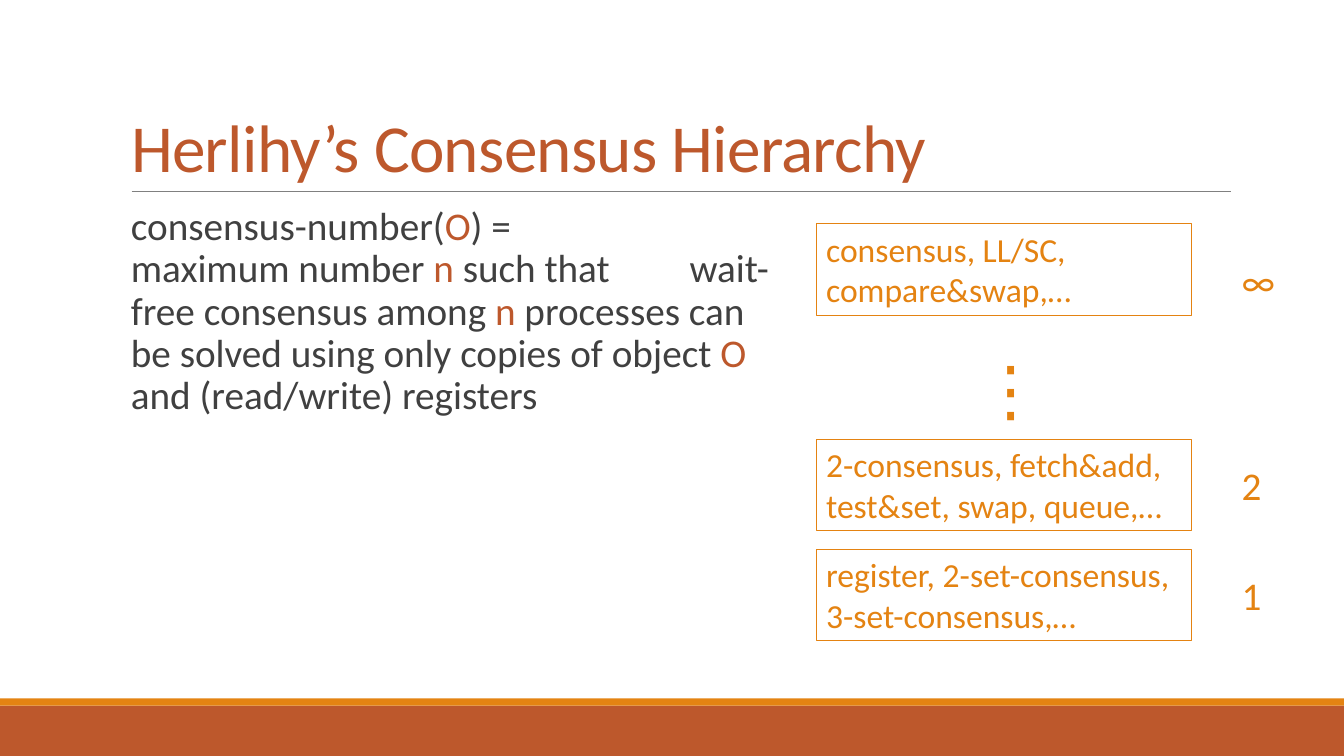
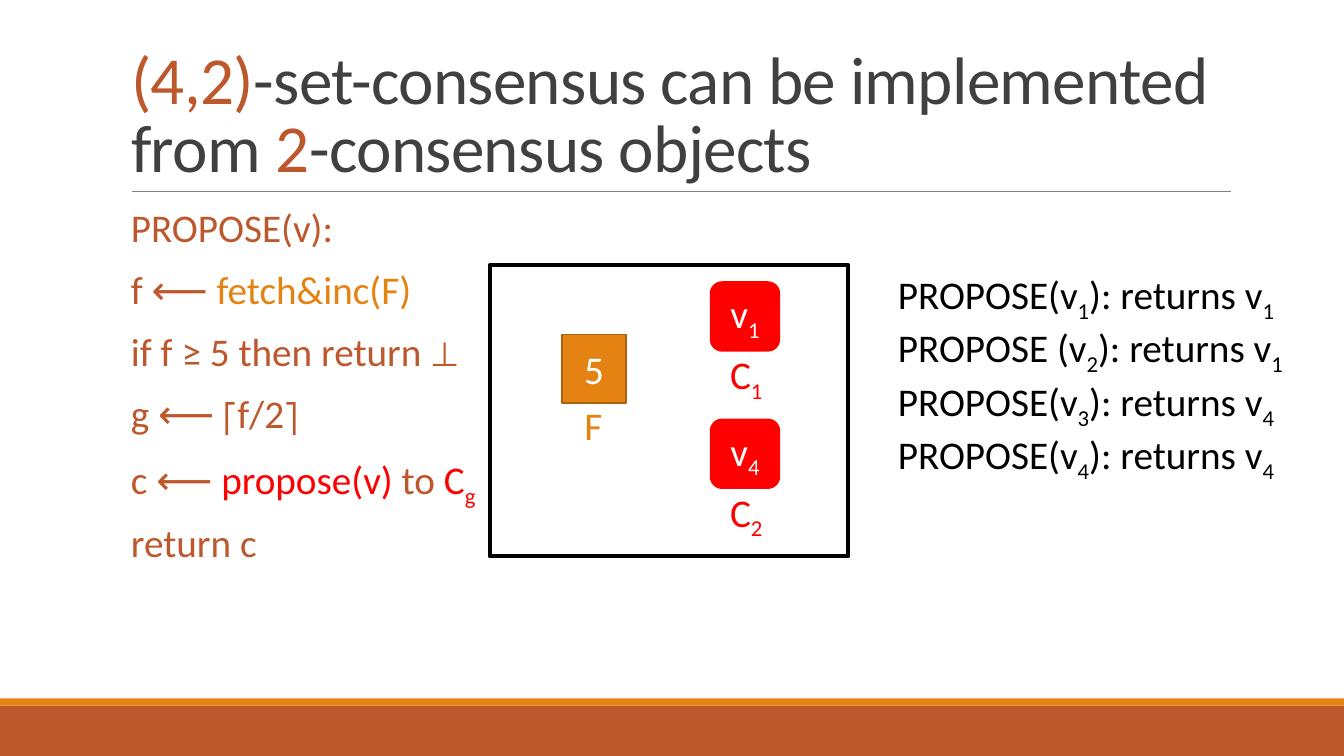
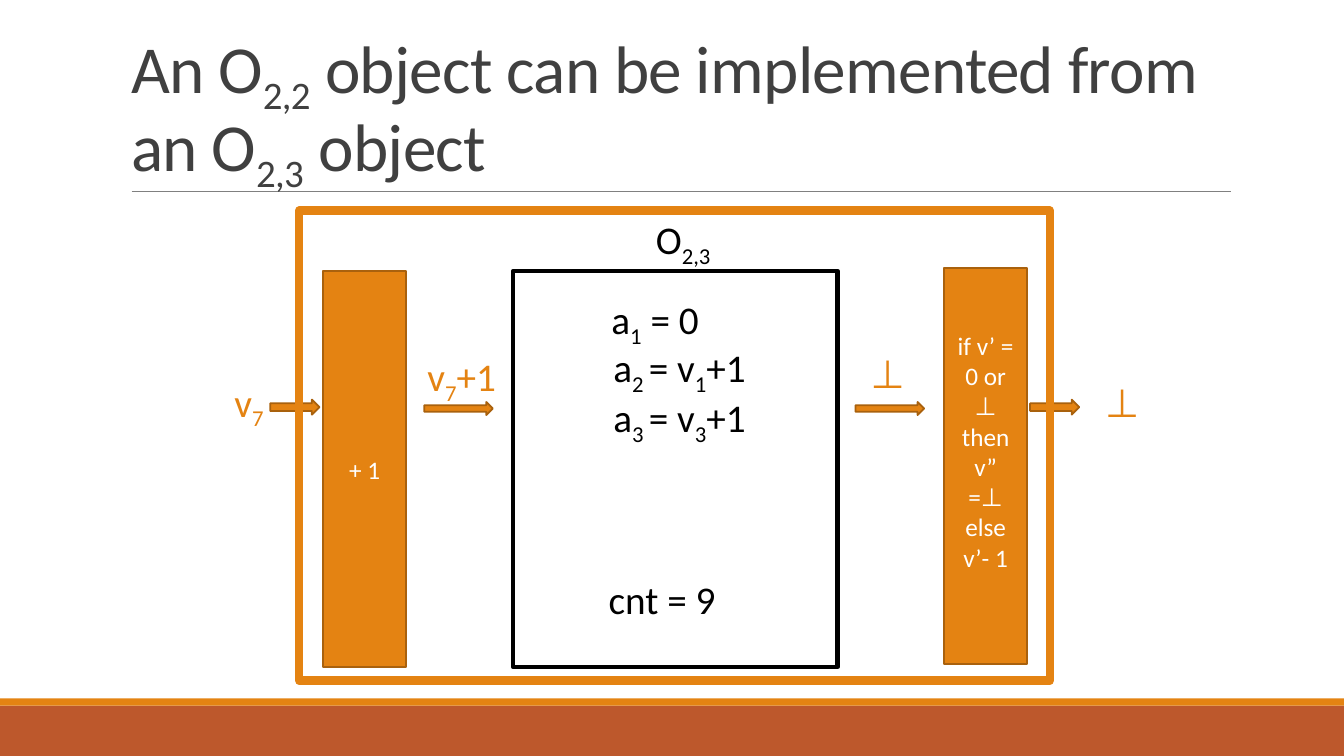
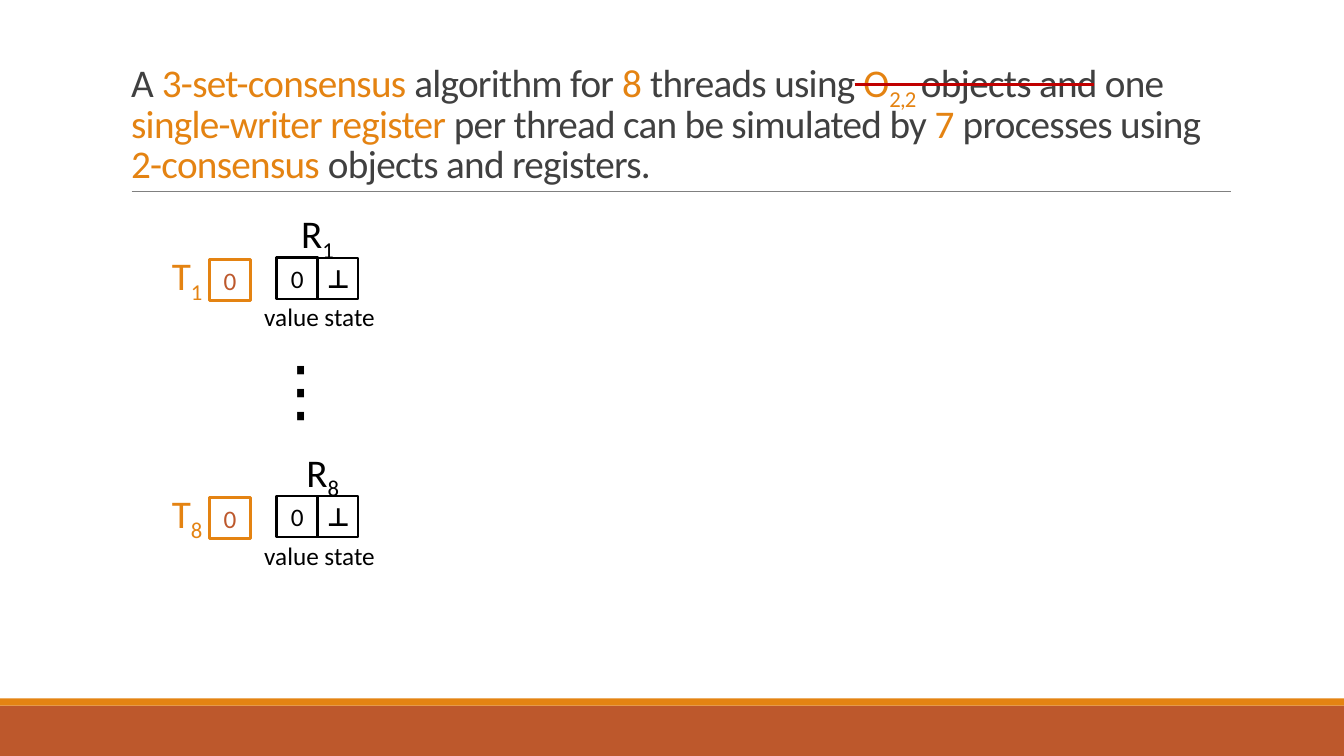
from lxml.etree import SubElement
from pptx import Presentation
from pptx.dml.color import RGBColor
from pptx.enum.shapes import MSO_CONNECTOR, MSO_SHAPE as SHAPE
from pptx.enum.text import MSO_ANCHOR as ANCHOR, MSO_AUTO_SIZE as AUTO_SIZE, PP_ALIGN as ALIGN
from pptx.oxml.ns import qn
from pptx.util import Cm, Pt

RUST = RGBColor(0xBD, 0x58, 0x2C)
ORANGE = RGBColor(0xE4, 0x83, 0x12)
BROWN = RGBColor(0xA9, 0x61, 0x0D)
DARK = RGBColor(0x40, 0x40, 0x40)
GRAY = RGBColor(0x80, 0x80, 0x80)
RED = RGBColor(0xFF, 0x00, 0x00)
CRIMSON = RGBColor(0xC0, 0x00, 0x00)
BLACK = RGBColor(0x00, 0x00, 0x00)
WHITE = RGBColor(0xFF, 0xFF, 0xFF)
FONT = "Calibri"


def write_runs(paragraph, pieces, size, spacing=0):
    for text, color, *own_size in pieces:
        if text == "\n":
            paragraph.add_line_break()
            continue
        for index, part in enumerate(text.split("|")):
            if not part:
                continue
            run = paragraph.add_run()
            run.text = part
            run.font.name = FONT
            run.font.size = Pt(own_size[0] if own_size else size)
            run.font.color.rgb = color
            properties = run._r.get_or_add_rPr()
            if spacing:
                properties.set("spc", str(spacing))
            if index % 2:
                properties.set("baseline", "-25000")


def add_item(slide, kind, left, top, width, height, lines=(), size=28, color=BLACK,
             fill=None, line=None, weight=1.25, align=ALIGN.LEFT, anchor=ANCHOR.TOP):
    frame = Cm(left), Cm(top), Cm(width), Cm(height)
    if kind is None:
        shape = slide.shapes.add_textbox(*frame)
    else:
        shape = slide.shapes.add_shape(kind, *frame)
        shape.shadow.inherit = False
        if fill is None:
            shape.fill.background()
        else:
            shape.fill.solid()
            shape.fill.fore_color.rgb = fill
        if line is None:
            shape.line.fill.background()
        else:
            shape.line.color.rgb = line
            shape.line.width = Pt(weight)
    text_frame = shape.text_frame
    text_frame.word_wrap = True
    text_frame.vertical_anchor = anchor
    for index, content in enumerate(lines):
        paragraph = text_frame.add_paragraph() if index else text_frame.paragraphs[0]
        paragraph.alignment = align
        pieces = [(content, color)] if isinstance(content, str) else content
        write_runs(paragraph, pieces, size)
    return shape


presentation = Presentation()
presentation.slide_width = Cm(33.87)
presentation.slide_height = Cm(19.05)
layout = presentation.slide_layouts[5]

for placeholder in list(layout.placeholders):
    if placeholder.placeholder_format.idx:
        placeholder._element.getparent().remove(placeholder._element)
    else:
        placeholder.left, placeholder.top = Cm(3.05), Cm(0.79)
        placeholder.width, placeholder.height = Cm(28.4), Cm(4.04)
        placeholder.text_frame.vertical_anchor = ANCHOR.BOTTOM
        placeholder.text_frame.auto_size = AUTO_SIZE.NONE

titles = (
    (48, [("Herlihy’s Consensus Hierarchy", RUST)]),
    (48, [("(4,2)", RUST), ("-set-consensus can be implemented from ", DARK),
          ("2", RUST), ("-consensus objects", DARK)]),
    (48, [("An O|2,2| object can be implemented from an O|2,3| object", DARK)]),
    (28, [("A ", DARK), ("3-set-consensus", ORANGE), (" algorithm for ", DARK),
          ("8 ", ORANGE), ("threads using ", DARK), ("O|2,2 |", ORANGE),
          ("objects and one ", DARK), ("single-writer register ", ORANGE),
          ("per thread can be simulated by ", DARK), ("7", ORANGE),
          (" processes using", DARK), ("\n", DARK), ("2-consensus", ORANGE),
          (" objects and registers.", DARK)]),
)
slides = []
for size, pieces in titles:
    slide = presentation.slides.add_slide(layout)
    paragraph = slide.shapes.title.text_frame.paragraphs[0]
    paragraph.alignment = ALIGN.LEFT
    paragraph.line_spacing = 0.85
    write_runs(paragraph, pieces, size, spacing=-50)
    slides.append(slide)
hierarchy, set_consensus, object_slide, simulation = slides

connectors = []
for slide, start, end, height, color, weight in (
    (hierarchy, 3.32, 31.01, 4.83, GRAY, 0.5),
    (simulation, 21.54, 27.56, 2.13, CRIMSON, 2.25),
):
    connector = slide.shapes.add_connector(
        MSO_CONNECTOR.STRAIGHT, Cm(start), Cm(height), Cm(end), Cm(height))
    connector.line.color.rgb = color
    connector.line.width = Pt(weight)
    SubElement(connector._element.spPr, qn("a:effectLst"))
    connectors.append(connector)
title_rule = connectors[0]
wide_band = add_item(hierarchy, SHAPE.RECTANGLE, 0, 17.78, 33.87, 1.27, fill=RUST)
thin_band = add_item(hierarchy, SHAPE.RECTANGLE, 0, 17.6, 33.87, 0.18, fill=ORANGE)
for shape in (wide_band, thin_band, title_rule):
    layout.shapes._spTree.append(shape._element)

definition = add_item(hierarchy, None, 3.05, 5.08, 16.75, 11.23, [[
    ("consensus-number(", DARK), ("O", RUST), (") =", DARK), ("\n", DARK),
    ("maximum number ", DARK), ("n ", RUST),
    ("such that\twait-free consensus among ", DARK), ("n", RUST),
    (" processes can be solved using only copies of object ", DARK),
    ("O", RUST), (" and (read/write) registers", DARK)]])
algorithm = add_item(set_consensus, None, 3.05, 5.13, 10.8, 11.18, [
    "PROPOSE(v):",
    [("f ⟵ ", RUST), ("fetch&inc(F)", ORANGE)],
    [("if f ≥ 5 then return ", RUST), ("⊥", RUST, 24)],
    [("g ⟵ ", RUST), ("⎡", RUST, 20), ("f/2", RUST), ("⎤", RUST, 20)],
    [("c ⟵ ", RUST), ("propose(v) ", RED), ("to ", RUST), ("C|g|", RED)],
    "return c"], color=RUST)
for body in (definition, algorithm):
    for paragraph in body.text_frame.paragraphs:
        paragraph.line_spacing = 0.9
        paragraph.space_before = Pt(12)
        paragraph.space_after = Pt(2)
tab_list = SubElement(definition.text_frame.paragraphs[0]._p.get_or_add_pPr(), qn("a:tabLst"))
SubElement(tab_list, qn("a:tab"), pos=str(Cm(14.08)), algn="l")

for top, number_top, objects, number in (
    (5.64, 6.35, "consensus, LL/SC, compare&swap,…", "∞"),
    (11.07, 11.51, "2-consensus, fetch&add, test&set, swap, queue,…", "2"),
    (13.84, 14.27, "register, 2-set-consensus, 3-set-consensus,…", "1"),
):
    add_item(hierarchy, SHAPE.RECTANGLE, 20.57, top, 9.47, 2.31, [objects],
             size=24, color=ORANGE, line=ORANGE, weight=0.75)
    add_item(hierarchy, None, 31.04, number_top, 1.5, 1.45, [number], color=ORANGE)

for slide, left, color in ((hierarchy, 24.38, ORANGE), (simulation, 6.5, BLACK)):
    add_item(slide, None, left, 8.64, 2.2, 2.31, ["⋮"], size=48, color=color)

add_item(set_consensus, SHAPE.RECTANGLE, 12.34, 6.68, 9.04, 7.34, line=BLACK, weight=3)
add_item(set_consensus, SHAPE.RECTANGLE, 14.17, 8.43, 1.6, 1.73, ["5"], color=WHITE,
         fill=ORANGE, line=BROWN, align=ALIGN.CENTER, anchor=ANCHOR.MIDDLE)
add_item(set_consensus, None, 14.48, 9.98, 1.2, 1.45, ["F"], color=ORANGE)
for index, value in enumerate(("v|1|", "v|4|")):
    top = 7.11 + index * 3.46
    add_item(set_consensus, SHAPE.ROUNDED_RECTANGLE, 17.91, top, 1.73, 1.73, [value],
             color=WHITE, fill=RED, line=RED, align=ALIGN.CENTER, anchor=ANCHOR.MIDDLE)
    add_item(set_consensus, None, 18.15, top + 1.6, 1.73, 1.45, [f"C|{index + 1}|"], color=RED)
add_item(set_consensus, None, 22.38, 6.68, 10.85, 5.05, [
    "PROPOSE(v|1|): returns v|1|", "PROPOSE (v|2|): returns v|1|",
    "PROPOSE(v|3|): returns v|4|", "PROPOSE(v|4|): returns v|4|"])

add_item(object_slide, SHAPE.RECTANGLE, 12.93, 6.83, 8.18, 9.98, line=BLACK, weight=3)
for left, top, text, color in (
    (16.28, 5.31, "O|2,3|", BLACK),
    (15.16, 7.32, "a|1| = 0", BLACK),
    (15.21, 8.53, "a|2 |= v|1|+1", BLACK),
    (15.21, 9.78, "a|3 |= v|3|+1", BLACK),
    (15.09, 14.38, "cnt = 9", BLACK),
    (5.66, 9.4, "v|7|", ORANGE),
    (10.52, 8.76, "v|7|+1", ORANGE),
):
    add_item(object_slide, None, left, top, 5, 1.45, [text], color=color)
for left, top in ((21.62, 8.69), (27.53, 9.4)):
    add_item(object_slide, None, left, top, 1.5, 1.45, ["⊥"], color=ORANGE, align=ALIGN.CENTER)

for left, top, lines, bottom in (
    (8.15, 6.83, ["+ 1"], 0.13),
    (23.8, 6.76, ["if v’ =", "0 or", "⊥", "then", "v” =⊥", "else", "v’- 1"], 0.89),
):
    bar = add_item(object_slide, SHAPE.RECTANGLE, left, top, 2.08, 9.98, lines, size=18,
                   color=WHITE, fill=ORANGE, line=BROWN, align=ALIGN.CENTER, anchor=ANCHOR.MIDDLE)
    bar.text_frame.margin_bottom = Cm(bottom)

for left, top, width, height in (
    (6.81, 10.07, 1.24, 0.38), (10.69, 10.13, 1.73, 0.33),
    (21.56, 10.13, 1.73, 0.33), (25.96, 10.07, 1.24, 0.38),
):
    add_item(object_slide, SHAPE.RIGHT_ARROW, left, top, width, height, fill=ORANGE, line=BROWN)
add_item(object_slide, SHAPE.RECTANGLE, 7.54, 5.31, 18.92, 11.84, line=ORANGE, weight=6)

for offset, number, register_left in ((0, 1, 7.34), (6, 8, 7.47)):
    for left, top, width, text, size, color in (
        (4.08, 6.21, 1.8, f"T|{number}|", 28, ORANGE),
        (register_left, 5.16, 1.8, f"R|{number}|", 28, BLACK),
        (6.41, 7.48, 3.63, "value state", 18, BLACK),
    ):
        add_item(simulation, None, left, top + offset, width, 1.45, [text], size, color)
    for left, top, side, text, color, line, weight in (
        (5.28, 6.54, 1.04, "0", RUST, ORANGE, 2.25),
        (6.97, 6.49, 1.04, "0", BLACK, BLACK, 1.5),
        (7.99, 6.5, 1.04, "", BLACK, BLACK, 1.5),
    ):
        add_item(simulation, SHAPE.RECTANGLE, left, top + offset, side, side, [text], size=18,
                 color=color, line=line, weight=weight, align=ALIGN.CENTER, anchor=ANCHOR.MIDDLE)
    state = add_item(simulation, None, 7.99, 6.52 + offset, 1.5, 1.02, ["⊥"], size=18)
    state.text_frame.paragraphs[0].runs[0].font.bold = True

presentation.save("out.pptx")
